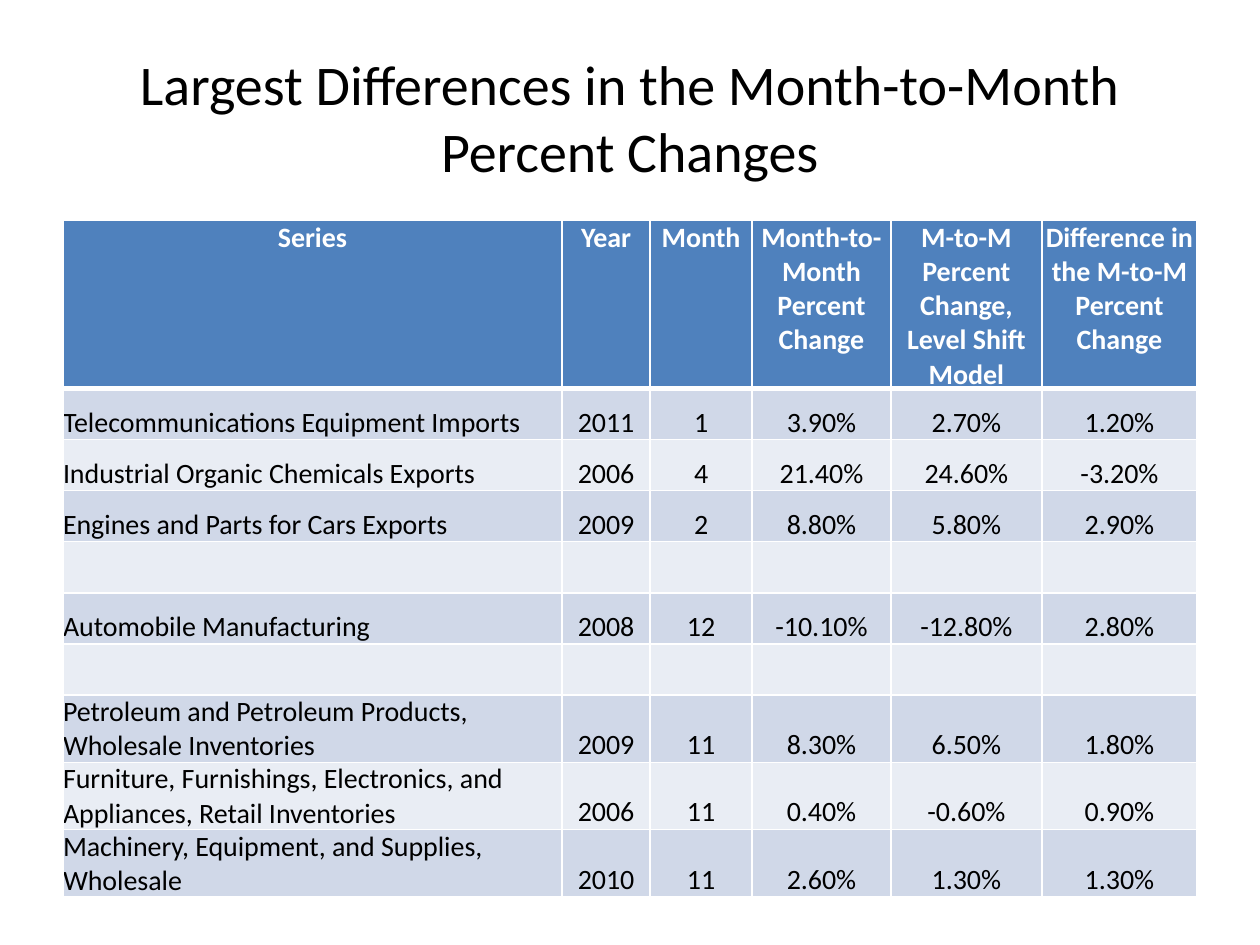
from lxml.etree import SubElement
from pptx import Presentation
from pptx.dml.color import RGBColor as Color
from pptx.enum.text import MSO_ANCHOR as Anchor, PP_ALIGN as Align
from pptx.oxml.ns import qn
from pptx.util import Pt

COLORS = {"text": "000000", "white": "FFFFFF", "header": "4F81BD",
          "odd": "D0D8E8", "even": "E9EDF4"}
COLUMN_WIDTHS = [285.12, 50.4, 58.32, 79.2, 86.4, 88.56]
ROW_HEIGHT = 29.2
HEADERS = ["Series", "Year", "Month", "Month-to-Month Percent Change",
           "M-to-M Percent Change, Level Shift Model",
           "Difference in the M-to-M Percent Change"]
BLANK_ROW = [""] * len(HEADERS)
ROWS = [
    ["Telecommunications Equipment Imports", "2011", "1", "3.90%", "2.70%", "1.20%"],
    ["Industrial Organic Chemicals Exports", "2006", "4", "21.40%", "24.60%", "-3.20%"],
    ["Engines and Parts for Cars Exports", "2009", "2", "8.80%", "5.80%", "2.90%"],
    BLANK_ROW,
    ["Automobile Manufacturing", "2008", "12", "-10.10%", "-12.80%", "2.80%"],
    BLANK_ROW,
    ["Petroleum and Petroleum Products, Wholesale Inventories",
     "2009", "11", "8.30%", "6.50%", "1.80%"],
    ["Furniture, Furnishings, Electronics, and Appliances, Retail Inventories",
     "2006", "11", "0.40%", "-0.60%", "0.90%"],
    ["Machinery, Equipment, and Supplies, Wholesale",
     "2010", "11", "2.60%", "1.30%", "1.30%"],
]


def write_text(frame, text, size=16, color="text", bold=False, align=Align.CENTER):
    """Put one formatted paragraph into a text frame."""
    paragraph = frame.paragraphs[0]
    paragraph.alignment = align
    if not text:
        return
    run = paragraph.add_run()
    run.text = text
    font = run.font
    font.name, font.size, font.bold = "Calibri", Pt(size), bold
    font.color.rgb = Color.from_string(COLORS[color])


class SlideBuilder:
    def __init__(self, slide):
        self.slide = slide

    def title(self, text, left, top, width, height):
        box = self.slide.shapes.add_textbox(Pt(left), Pt(top), Pt(width), Pt(height))
        box.text_frame.word_wrap = True
        box.text_frame.vertical_anchor = Anchor.MIDDLE
        write_text(box.text_frame, text, size=32)

    def borders(self, cell, bottom=1):
        properties = cell._tc.get_or_add_tcPr()
        sides = {"lnL": 1, "lnR": 1, "lnT": 1, "lnB": bottom}
        for position, (side, width) in enumerate(sides.items()):
            line = SubElement(properties, qn(f"a:{side}"), w=str(Pt(width)))
            fill = SubElement(line, qn("a:solidFill"))
            SubElement(fill, qn("a:srgbClr"), val=COLORS["white"])
            properties.insert(position, line)  # borders come before the fill

    def cell(self, cell, text, fill, header=False, align=Align.CENTER):
        cell.margin_left = cell.margin_right = cell.margin_top = cell.margin_bottom = 0
        cell.vertical_anchor = Anchor.TOP if header else Anchor.BOTTOM
        cell.fill.solid()
        cell.fill.fore_color.rgb = Color.from_string(COLORS[fill])
        write_text(cell.text_frame, text, bold=header, align=align,
                   color="white" if header else "text")
        self.borders(cell, bottom=3 if header else 1)

    def table(self, headers, rows, left, top, widths, row_height):
        count = len(rows) + 1
        table = self.slide.shapes.add_table(
            count, len(headers), Pt(left), Pt(top),
            Pt(sum(widths)), Pt(row_height * count)).table
        for column, width in zip(table.columns, widths):
            column.width = Pt(width)
        for column, text in enumerate(headers):
            self.cell(table.cell(0, column), text, "header", header=True)
        for number, row in enumerate(rows, start=1):
            for column, text in enumerate(row):
                self.cell(table.cell(number, column), text,
                          "odd" if number % 2 else "even",
                          align=Align.CENTER if column else Align.LEFT)


def main():
    presentation = Presentation()
    presentation.slide_width, presentation.slide_height = Pt(720), Pt(540)
    builder = SlideBuilder(presentation.slides.add_slide(presentation.slide_layouts[6]))

    # Title
    builder.title("Largest Differences in the Month-to-Month Percent Changes",
                  36, 21.6, 648, 90)

    # Table of percent changes; rows grow with wrapped text
    builder.table(HEADERS, ROWS, 36, 126, COLUMN_WIDTHS, ROW_HEIGHT)

    presentation.save("out.pptx")


if __name__ == "__main__":
    main()
